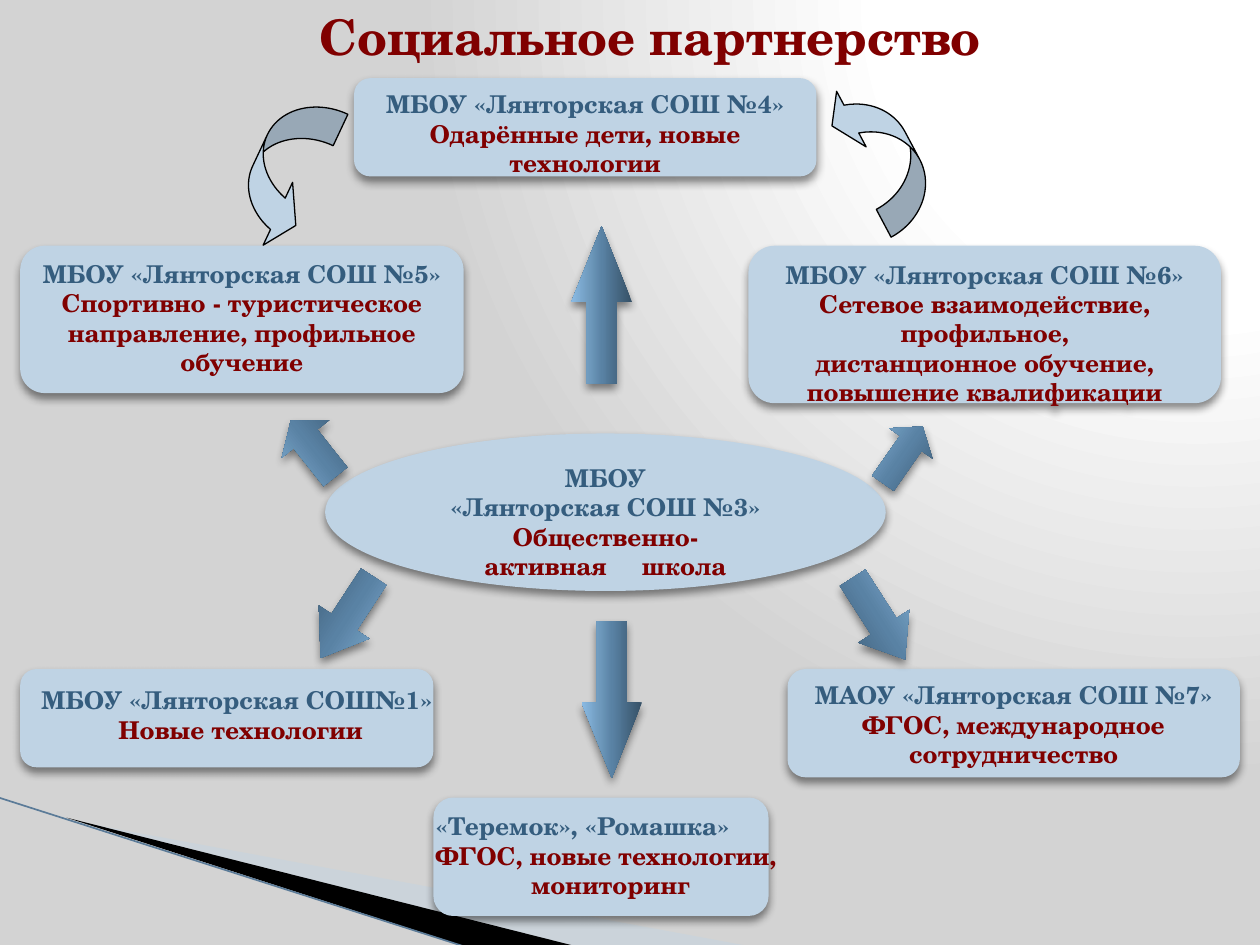
"""Build the social partnership slide: a central school and its partners."""
from lxml import etree
from pptx import Presentation
from pptx.dml.color import RGBColor
from pptx.enum.shapes import MSO_CONNECTOR, MSO_SHAPE
from pptx.enum.text import MSO_ANCHOR, MSO_AUTO_SIZE, PP_ALIGN
from pptx.oxml import parse_xml
from pptx.oxml.ns import qn
from pptx.util import Inches, Pt

FONT = "TeX Gyre Schola"
PALE = RGBColor(0xBF, 0xD3, 0xE4)
WEDGE = RGBColor(0xC0, 0xD3, 0xE6)
BLUE = RGBColor(0x35, 0x5D, 0x7E)
STRIPE = RGBColor(0x5B, 0x7B, 0x98)
MAROON = RGBColor(0x80, 0x00, 0x00)
BLACK = RGBColor(0, 0, 0)
WHITE = RGBColor(0xFF, 0xFF, 0xFF)
GREY = RGBColor(0xD3, 0xD3, 0xD3)
ARROW_STOPS = [(0, RGBColor(0x36, 0x51, 0x67)), (50, RGBColor(0x59, 0x82, 0xA4)),
               (70, RGBColor(0x6E, 0x99, 0xBC)), (100, RGBColor(0x8B, 0xBB, 0xE4))]
NS = 'xmlns:a="http://schemas.openxmlformats.org/drawingml/2006/main"'
SHADOW = (f'<a:effectLst {NS}><a:outerShdw blurRad="63500" dist="38100" dir="5400000" '
          'rotWithShape="0"><a:srgbClr val="000000"><a:alpha val="45000"/></a:srgbClr>'
          '</a:outerShdw></a:effectLst>')
CENTER, LEFT, JUSTIFY = PP_ALIGN.CENTER, PP_ALIGN.LEFT, PP_ALIGN.JUSTIFY


def gradient(stops, direction):
    marks = "".join(f'<a:gs pos="{pos * 1000}"><a:srgbClr val="{color}"/></a:gs>'
                    for pos, color in stops)
    return parse_xml(f'<a:gradFill {NS} rotWithShape="1"><a:gsLst>{marks}</a:gsLst>'
                     f'{direction}</a:gradFill>')


def write(shape, lines, size=14):
    frame = shape.text_frame
    frame.word_wrap = True
    frame.vertical_anchor = MSO_ANCHOR.TOP
    for index, (text, color, align) in enumerate(lines):
        paragraph = frame.add_paragraph() if index else frame.paragraphs[0]
        paragraph.alignment = align
        for piece in text.split("|"):
            run = paragraph.add_run()
            run.text = piece
            run.font.name = FONT
            run.font.size = Pt(size)
            run.font.bold = True
            run.font.color.rgb = color
            if piece == " ":
                run.font._element.set("spc", "1600")


prs = Presentation()
prs.slide_width, prs.slide_height = Inches(10), Inches(7.5)
slide = prs.slides.add_slide(prs.slide_layouts[6])
shapes = slide.shapes

backdrop = slide.background.fill
backdrop.solid()
solid = slide._element.find(".//" + qn("a:solidFill"))
solid.getparent().replace(solid, gradient(
    [(0, WHITE), (40, WHITE), (100, GREY)],
    '<a:path path="circle"><a:fillToRect l="95000" t="-106000" r="5000" b="206000"/></a:path>'))

wedges = [
    (WEDGE, [(0.55, 6.51), (5.95, 7.51), (4.56, 7.51)]),
    (BLACK, [(0.53, 6.49), (4.57, 7.51), (3.72, 7.52)]),
]
for color, corners in wedges:
    points = [(Inches(x), Inches(y)) for x, y in corners]
    builder = shapes.build_freeform(*points[0])
    builder.add_line_segments(points[1:], close=True)
    wedge = builder.convert_to_shape()
    wedge.shadow.inherit = False
    wedge.fill.solid()
    wedge.fill.fore_color.rgb = color
    wedge.line.fill.background()
    if color == WEDGE:
        tint = wedge._element.spPr.find(".//" + qn("a:srgbClr"))
        etree.SubElement(tint, qn("a:alpha")).set("val", "40000")

stripe = shapes.add_connector(MSO_CONNECTOR.STRAIGHT, Inches(-0.01), Inches(6.33),
                              Inches(3.71), Inches(7.52))
stripe.line.color.rgb = STRIPE
stripe.line.width = Pt(0.95)
etree.SubElement(stripe._element.spPr, qn("a:effectLst"))

schools = [
    (MSO_SHAPE.ROUNDED_RECTANGLE, (0.16, 1.95, 3.52, 1.17), [
        ("МБОУ «Лянторская СОШ №5»", BLUE, CENTER),
        ("Спортивно - туристическое направление, профильное обучение", MAROON, CENTER)]),
    (MSO_SHAPE.ROUNDED_RECTANGLE, (5.94, 1.95, 3.75, 1.25), [
        ("МБОУ «Лянторская СОШ №6»", BLUE, CENTER),
        ("Сетевое взаимодействие, профильное,", MAROON, CENTER),
        ("дистанционное обучение, повышение квалификации", MAROON, CENTER)]),
    (MSO_SHAPE.OVAL, (2.58, 3.44, 4.45, 1.25), [
        ("МБОУ", BLUE, CENTER),
        ("«Лянторская СОШ №3»", BLUE, CENTER),
        ("Общественно-", MAROON, CENTER),
        ("активная| |школа", MAROON, CENTER)]),
    (MSO_SHAPE.ROUNDED_RECTANGLE, (3.44, 6.33, 2.66, 0.94), []),
    (MSO_SHAPE.ROUNDED_RECTANGLE, (0.16, 5.31, 3.28, 0.78), []),
    (MSO_SHAPE.ROUNDED_RECTANGLE, (6.25, 5.31, 3.59, 0.86), [
        ("МАОУ «Лянторская СОШ №7»", BLUE, CENTER),
        ("ФГОС, международное сотрудничество", MAROON, CENTER)]),
    (MSO_SHAPE.ROUNDED_RECTANGLE, (2.81, 0.62, 3.67, 0.78), [
        ("МБОУ «Лянторская СОШ №4»", BLUE, CENTER),
        ("Одарённые дети, новые технологии", MAROON, CENTER)]),
]
for outline, place, lines in schools:
    school = shapes.add_shape(outline, *map(Inches, place))
    school.fill.solid()
    school.fill.fore_color.rgb = PALE
    school.line.fill.background()
    school._element.spPr.append(parse_xml(SHADOW))
    write(school, lines)

turns = [
    ((2.01, 0.74, 0.51, 1.25), 25.1, (0.54, 1.08, 0.33)),
    ((6.75, 0.59, 0.49, 1.25), 152, (0.51, 1.02, 0.33)),
]
for place, angle, bends in turns:
    turn = shapes.add_shape(MSO_SHAPE.CURVED_RIGHT_ARROW, *map(Inches, place))
    turn.rotation = angle
    for index, bend in enumerate(bends):
        turn.adjustments[index] = bend
    turn.shadow.inherit = False
    turn.fill.solid()
    turn.fill.fore_color.rgb = PALE
    turn.line.color.rgb = BLACK
    turn.line.width = Pt(0.75)

rays = [
    ((4.15, 2.18, 1.25, 0.48), 270, 1.25, False),
    ((2.2, 3.32, 0.57, 0.48), 231.6, 0.39, False),
    ((6.89, 3.4, 0.55, 0.42), 305, 0.39, False),
    ((2.37, 4.66, 0.77, 0.48), 123.2, 0.71, False),
    ((6.59, 4.67, 0.77, 0.48), 57.3, 0.65, False),
    ((4.23, 5.31, 1.25, 0.48), 270, 1.25, True),
]
for place, angle, head, flipped in rays:
    ray = shapes.add_shape(MSO_SHAPE.RIGHT_ARROW, *map(Inches, place))
    ray.rotation = angle
    ray.adjustments[0] = 0.5
    ray.adjustments[1] = head
    ray.line.fill.background()
    ray_look = ray._element.spPr
    ray_look.insert(2, gradient(ARROW_STOPS, '<a:lin ang="16200000" scaled="0"/>'))
    ray_look.append(parse_xml(SHADOW))
    if flipped:
        ray_look.find(qn("a:xfrm")).set("flipH", "1")

captions = [
    ((0.94, 0, 8.44, 0.57), 28, [("Социальное партнерство", MAROON, CENTER)]),
    ((0.23, 5.39, 3.36, 0.57), 14, [
        ("МБОУ «Лянторская СОШ№1»", BLUE, LEFT),
        ("Новые технологии", MAROON, CENTER)]),
    ((3.36, 6.39, 2.97, 1.11), 14, [
        ("«Теремок», «Ромашка»", BLUE, LEFT),
        ("ФГОС, новые технологии,", MAROON, JUSTIFY),
        ("мониторинг", MAROON, CENTER)]),
]
for place, size, lines in captions:
    caption = shapes.add_textbox(*map(Inches, place))
    write(caption, lines, size)
    caption.text_frame.auto_size = MSO_AUTO_SIZE.SHAPE_TO_FIT_TEXT

prs.save("out.pptx")
